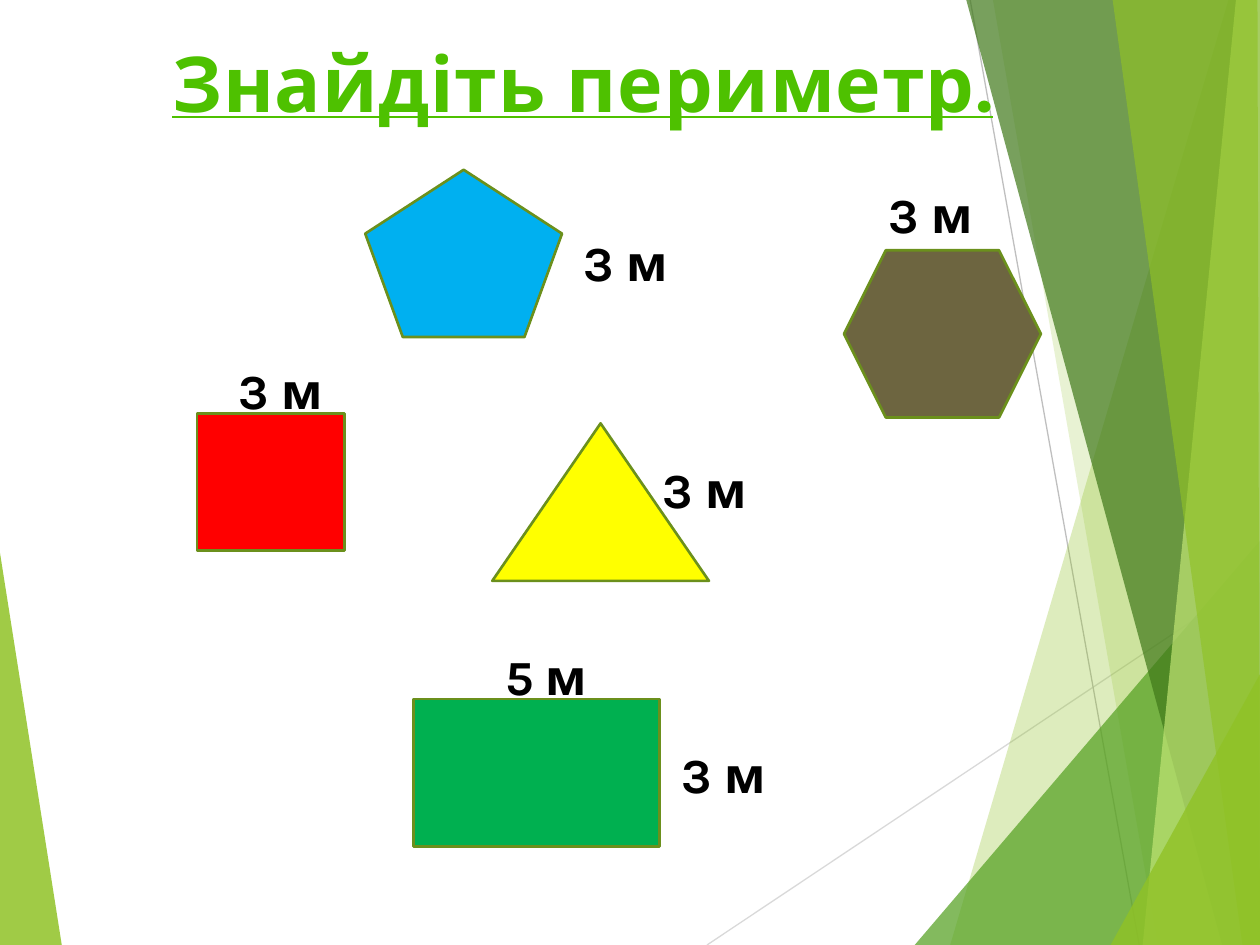
from pptx import Presentation
from pptx.dml.color import RGBColor
from pptx.enum.shapes import MSO_CONNECTOR, MSO_SHAPE as Preset
from pptx.enum.text import MSO_AUTO_SIZE as AutoSize
from pptx.oxml.ns import qn
from pptx.util import Pt
from lxml.etree import SubElement

WIDTH, HEIGHT = 720, 540
FONT = "Karla"
OUTLINE = "6B901C"
TITLE = "Знайдіть периметр."
LABEL_SIZE = (75.6, 41)

LEFT_FACET = ("90C226", 85, [(0, 316), (35.3, HEIGHT), (0, HEIGHT)])
RAYS = [
    ("D9D9D9", (404, HEIGHT), (WIDTH, 329)),
    ("BFBFBF", (554.4, 0), (651, HEIGHT)),
]
RIGHT_FACETS = [
    ("90C226", 30, [(702, 0), (543, HEIGHT), (WIDTH, HEIGHT), (WIDTH, 0)]),
    ("90C226", 20, [(567.4, 0), (661.7, HEIGHT), (WIDTH, HEIGHT), (WIDTH, 0)]),
    ("54A021", 72, [(522.7, HEIGHT), (WIDTH, 309), (WIDTH, HEIGHT)]),
    ("3F7819", 70, [(552.2, 0), (698.4, HEIGHT), (WIDTH, HEIGHT), (WIDTH, 0)]),
    ("C0E474", 70, [(706.3, 0), (653, HEIGHT), (WIDTH, HEIGHT), (WIDTH, 0)]),
    ("90C226", 65, [(635.8, 0), (710, HEIGHT), (WIDTH, HEIGHT), (718.6, 0)]),
    ("90C226", 80, [(634.6, HEIGHT), (WIDTH, 385.2), (WIDTH, HEIGHT)]),
]
FIGURES = [
    (Preset.ISOSCELES_TRIANGLE, "FFFF00", (281.3, 241.9, 123.8, 90)),
    (Preset.RECTANGLE, "FF0000", (112.5, 236.2, 84.4, 78.5)),
    (Preset.RECTANGLE, "00B050", (236.2, 399.5, 140.6, 84.4)),
    (Preset.REGULAR_PENTAGON, "00B0F0", (208.7, 97, 112.5, 95.6)),
    (Preset.HEXAGON, "6D6540", (482.3, 143, 112.5, 95.6)),
]
LABELS = [
    ("3 м", 326.2, 129.6),
    ("3 м", 129.4, 202.2),
    ("3 м", 371.5, 258.8),
    ("3 м", 382.3, 422),
    ("5 м", 281.5, 366),
    ("3 м", 500.6, 101.8),
]


def color(value):
    return RGBColor.from_string(value)


def add_facet(slide, fill, opacity, points):
    corners = [(Pt(x), Pt(y)) for x, y in points]
    builder = slide.shapes.build_freeform(*corners[0])
    builder.add_line_segments(corners[1:], close=True)
    shape = builder.convert_to_shape()
    shape.shadow.inherit = False
    shape.fill.solid()
    shape.fill.fore_color.rgb = color(fill)
    shape.line.fill.background()
    tint = shape.fill._xPr.find(qn("a:solidFill"))[0]
    SubElement(tint, qn("a:alpha")).set("val", str(opacity * 1000))


def add_ray(slide, stroke, start, end):
    ray = slide.shapes.add_connector(
        MSO_CONNECTOR.STRAIGHT, *[Pt(value) for value in start + end])
    ray.line.color.rgb = color(stroke)
    ray.line.width = Pt(0.75)
    SubElement(ray._element.spPr, qn("a:effectLst"))


def add_figure(slide, preset, fill, box):
    shape = slide.shapes.add_shape(preset, *[Pt(value) for value in box])
    shape.shadow.inherit = False
    shape.fill.solid()
    shape.fill.fore_color.rgb = color(fill)
    shape.line.color.rgb = color(OUTLINE)
    shape.line.width = Pt(1.5)


def add_text(slide, text, box, size, fill, wrap=True):
    shape = slide.shapes.add_textbox(*[Pt(value) for value in box])
    frame = shape.text_frame
    frame.word_wrap = wrap
    frame.auto_size = AutoSize.SHAPE_TO_FIT_TEXT
    frame.text = text
    font = frame.paragraphs[0].runs[0].font
    font.name = FONT
    font.size = Pt(size)
    font.bold = True
    font.color.rgb = color(fill)
    return font


def main():
    presentation = Presentation()
    presentation.slide_width, presentation.slide_height = Pt(WIDTH), Pt(HEIGHT)
    slide = presentation.slides.add_slide(presentation.slide_layouts[6])

    add_facet(slide, *LEFT_FACET)
    for ray in RAYS:
        add_ray(slide, *ray)
    for facet in RIGHT_FACETS:
        add_facet(slide, *facet)
    for figure in FIGURES:
        add_figure(slide, *figure)
    for text, left, top in LABELS:
        add_text(slide, text, (left, top, *LABEL_SIZE), 28, "000000")

    title_font = add_text(
        slide, TITLE, (91.4, 16.6, 493.2, 60.5), 44, "4EC100", wrap=False)
    title_font.underline = True
    title_font._element.set("spc", "50")
    presentation.save("out.pptx")


if __name__ == "__main__":
    main()
